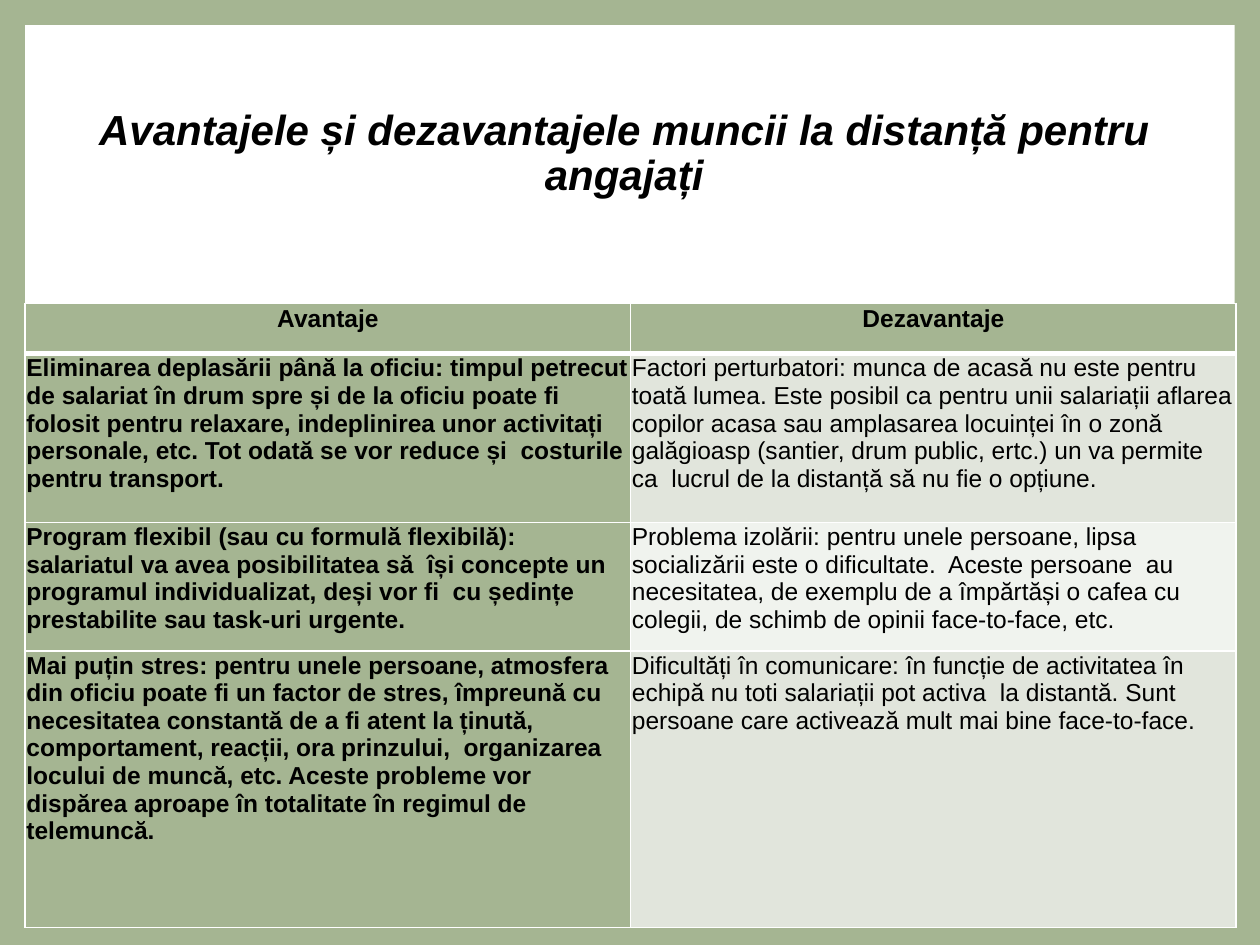
"""Build a slide comparing the pros and cons of remote work for employees."""
from pptx import Presentation
from pptx.dml.color import RGBColor as RGB
from pptx.enum.shapes import MSO_SHAPE as Shape
from pptx.enum.text import MSO_ANCHOR as Anchor, PP_ALIGN as Align
from pptx.oxml import parse_xml
from pptx.oxml.ns import nsdecls
from pptx.util import Pt

TITLE = "Avantajele și dezavantajele muncii la distanță pentru angajați"
ROWS = [
    ("Avantaje", "Dezavantaje"),
    ("Eliminarea deplasării până la oficiu: timpul petrecut de salariat în drum spre și de la oficiu "
     "poate fi folosit pentru relaxare, indeplinirea unor activitați personale, etc. Tot odată se vor "
     "reduce și  costurile pentru transport.",
     "Factori perturbatori: munca de acasă nu este pentru toată lumea. Este posibil ca pentru unii "
     "salariații aflarea copilor acasa sau amplasarea locuinței în o zonă galăgioasp (santier, drum "
     "public, ertc.) un va permite ca  lucrul de la distanță să nu fie o opțiune."),
    ("Program flexibil (sau cu formulă flexibilă): salariatul va avea posibilitatea să  își concepte un "
     "programul individualizat, deși vor fi  cu ședințe prestabilite sau task-uri urgente.",
     "Problema izolării: pentru unele persoane, lipsa socializării este o dificultate.  Aceste persoane  "
     "au necesitatea, de exemplu de a împărtăși o cafea cu colegii, de schimb de opinii face-to-face, etc."),
    ("Mai puțin stres: pentru unele persoane, atmosfera din oficiu poate fi un factor de stres, împreună "
     "cu necesitatea constantă de a fi atent la ținută, comportament, reacții, ora prinzului,  organizarea "
     "locului de muncă, etc. Aceste probleme vor dispărea aproape în totalitate în regimul de telemuncă.",
     "Dificultăți în comunicare: în funcție de activitatea în echipă nu toti salariații pot activa  la "
     "distantă. Sunt persoane care activează mult mai bine face-to-face."),
]
ROW_HEIGHTS = (28.5, 96.5, 73.5, 158)
SLIDE_W, SLIDE_H, MARGIN = 720, 540, 14.4
TITLE_BOX = (25.2, 20.9, 663, 135)
TABLE_TOP, TABLE_W = 173.5, 692
THEME = {
    "font": "Arial", "title": 24, "cell": 14, "inset": 0.7,
    "ink": "000000", "paper": "FFFFFF", "accent": "A5B592", "bands": ("E1E5DC", "F0F3EE"),
}


def apply(target, values):
    for name, value in values.items():
        setattr(target, name, value)


def paint(fill, color):
    fill.solid()
    fill.fore_color.rgb = RGB.from_string(color)


def write(tf, text, size, align=None, **style):
    p = tf.paragraphs[0]
    p.alignment = align
    r = p.add_run()
    r.text = text
    apply(r.font, {"name": THEME["font"], "size": Pt(size), **style})
    r.font.color.rgb = RGB.from_string(THEME["ink"])
    return p


def add_border(cell, side, width):
    cell._tc.get_or_add_tcPr().append(parse_xml(
        f'<a:ln{side} {nsdecls("a")} w="{Pt(width)}"><a:solidFill>'
        f'<a:srgbClr val="{THEME["paper"]}"/></a:solidFill></a:ln{side}>'))


def add_panel(slide):
    size = (SLIDE_W - 2 * MARGIN, SLIDE_H - 2 * MARGIN)
    sp = slide.shapes.add_shape(Shape.RECTANGLE, *map(Pt, (MARGIN, MARGIN, *size)))
    sp.shadow.inherit = False
    paint(sp.fill, THEME["paper"])
    sp.line.fill.background()


def add_title(slide):
    sp = slide.shapes.title
    apply(sp, dict(zip(("left", "top", "width", "height"), map(Pt, TITLE_BOX))))
    apply(sp.text_frame, {"word_wrap": True, "vertical_anchor": Anchor.MIDDLE})
    p = write(sp.text_frame, TITLE, THEME["title"], Align.CENTER, bold=True, italic=True)
    p.line_spacing = 0.9


def add_comparison(slide):
    box = map(Pt, (MARGIN, TABLE_TOP, TABLE_W, sum(ROW_HEIGHTS)))
    table = slide.shapes.add_table(len(ROWS), len(ROWS[0]), *box).table
    for i, (texts, height) in enumerate(zip(ROWS, ROW_HEIGHTS)):
        table.rows[i].height = Pt(height)
        for j, text in enumerate(texts):
            cell, header = table.cell(i, j), i == 0
            sides = ("left", "right", "top", "bottom")
            apply(cell, {f"margin_{side}": Pt(THEME["inset"]) for side in sides})
            for side in "LRTB":
                heavy = (header and side == "B") or (i == 1 and side == "T")
                add_border(cell, side, 3 if heavy else 1)
            paint(cell.fill, THEME["accent"] if header or j == 0 else THEME["bands"][(i - 1) % 2])
            align = Align.CENTER if header else Align.LEFT
            write(cell.text_frame, text, THEME["cell"], align, bold=header or j == 0)


def main():
    prs = Presentation()
    apply(prs, {"slide_width": Pt(SLIDE_W), "slide_height": Pt(SLIDE_H)})
    slide = prs.slides.add_slide(prs.slide_layouts[5])
    paint(slide.background.fill, THEME["accent"])
    add_panel(slide)
    tree = slide.shapes._spTree
    tree.append(slide.shapes.title._element)
    add_title(slide)
    add_comparison(slide)
    prs.save("out.pptx")


if __name__ == "__main__":
    main()
